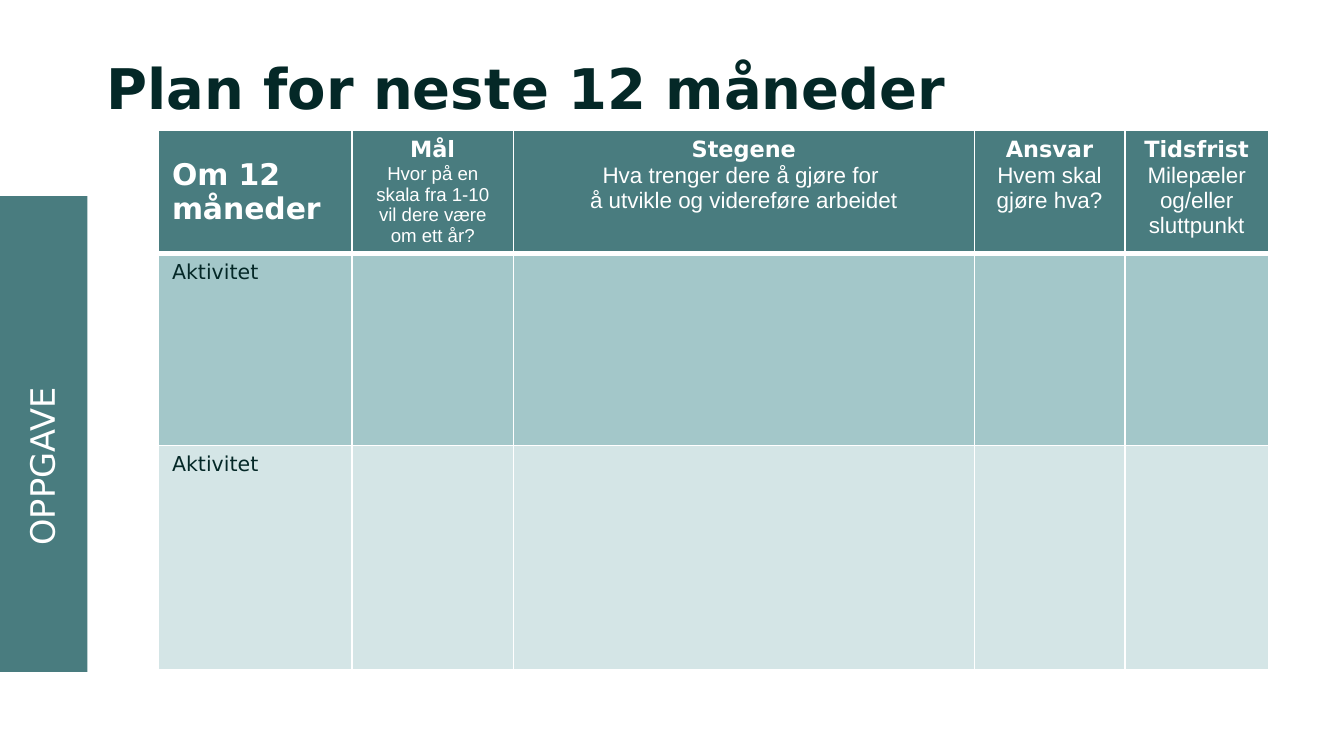
import copy
import dataclasses
import typing

import lxml.etree
import pptx
import pptx.dml.color
import pptx.enum.shapes
import pptx.enum.text
import pptx.oxml.ns
import pptx.util

Inches = pptx.util.Inches
Pt = pptx.util.Pt
qn = pptx.oxml.ns.qn
Align = pptx.enum.text.PP_ALIGN
Anchor = pptx.enum.text.MSO_ANCHOR


@dataclasses.dataclass(frozen=True)
class Theme:
    ink: str = "042827"
    teal: str = "497C7F"
    mid_teal: str = "A3C7C9"
    pale_teal: str = "D4E5E6"
    white: str = "FFFFFF"
    heading_font: str = "DejaVu Sans"
    detail_font: str = "Arial"
    title_size: float = 30
    side_size: float = 18
    period_size: float = 16
    heading_size: float = 12
    activity_size: float = 11
    small_size: float = 10
    rule: float = 1
    header_rule: float = 3


@dataclasses.dataclass(frozen=True)
class Column:
    width: float
    heading: str
    detail: str = ""
    detail_size: float = 12


@dataclasses.dataclass(frozen=True)
class Activity:
    height: float
    label: str
    fill: str


THEME = Theme()
HEADER_HEIGHT = 0.52  # grows to fit its text
PLAN_HEIGHT = 4.07
COLUMNS = [
    Column(1.44, "Om 12 måneder"),
    Column(1.2, "Mål", "Hvor på en skala fra 1-10 vil dere være om ett år?", THEME.small_size),
    Column(3.43, "Stegene", "Hva trenger dere å gjøre for \nå utvikle og videreføre arbeidet"),
    Column(1.12, "Ansvar", "Hvem skal gjøre hva?"),
    Column(1.07, "Tidsfrist", "Milepæler og/eller sluttpunkt"),
]
ACTIVITIES = [
    Activity(1.43, "Aktivitet", THEME.mid_teal),
    Activity(1.67, "Aktivitet", THEME.pale_teal),
]


def rgb(color: str) -> pptx.dml.color.RGBColor:
    return pptx.dml.color.RGBColor.from_string(color)


def format_run(run: typing.Any, size: float, color: str, bold: bool = False,
               font: str = THEME.heading_font) -> None:
    run.font.name = font
    run.font.size = Pt(size)
    run.font.bold = bold
    run.font.color.rgb = rgb(color)


def style_cell(cell: typing.Any, fill: str, top: float, bottom: float) -> None:
    """Give a cell white borders and a solid fill."""
    properties = cell._tc.get_or_add_tcPr()
    widths = {"L": THEME.rule, "R": THEME.rule, "T": top, "B": bottom}
    for side, width in widths.items():
        line = lxml.etree.SubElement(properties, qn(f"a:ln{side}"), w=str(Pt(width)))
        solid = lxml.etree.SubElement(line, qn("a:solidFill"))
        lxml.etree.SubElement(solid, qn("a:srgbClr"), val=THEME.white)
    cell.fill.solid()
    cell.fill.fore_color.rgb = rgb(fill)


def write_header(cell: typing.Any, column: Column) -> None:
    paragraph = cell.text_frame.paragraphs[0]
    paragraph.text = "\n".join(filter(None, (column.heading, column.detail)))
    heading, *details = paragraph.runs
    if not details:
        cell.vertical_anchor = Anchor.MIDDLE
        format_run(heading, THEME.period_size, THEME.white, bold=True)
        return
    paragraph.alignment = Align.CENTER
    format_run(heading, THEME.heading_size, THEME.white, bold=True)
    for detail in details:
        format_run(detail, column.detail_size, THEME.white, font=THEME.detail_font)
    # Line breaks take the format of the run before them
    for line_break in paragraph._p.findall(qn("a:br")):
        line_break.append(copy.deepcopy(line_break.getprevious().find(qn("a:rPr"))))


def add_plan(slide: typing.Any) -> None:
    heights = [HEADER_HEIGHT] + [activity.height for activity in ACTIVITIES]
    frame = slide.shapes.add_table(
        len(heights), len(COLUMNS), Inches(1.18), Inches(0.97),
        Inches(sum(column.width for column in COLUMNS)), Inches(PLAN_HEIGHT))
    plan = frame.table
    for row, height in zip(plan.rows, heights):
        row.height = Inches(height)
    for index, column in enumerate(COLUMNS):
        plan.columns[index].width = Inches(column.width)
        header = plan.cell(0, index)
        style_cell(header, THEME.teal, THEME.rule, THEME.header_rule)
        write_header(header, column)
        for row_index, activity in enumerate(ACTIVITIES, start=1):
            top = THEME.header_rule if row_index == 1 else THEME.rule
            style_cell(plan.cell(row_index, index), activity.fill, top, THEME.rule)
    for row_index, activity in enumerate(ACTIVITIES, start=1):
        paragraph = plan.cell(row_index, 0).text_frame.paragraphs[0]
        paragraph.text = activity.label
        format_run(paragraph.runs[0], THEME.activity_size, THEME.ink)
    frame.height = Inches(PLAN_HEIGHT)


def add_block(shapes: typing.Any, left: float, top: float, width: float, height: float) -> typing.Any:
    block = shapes.add_shape(pptx.enum.shapes.MSO_SHAPE.RECTANGLE, Inches(left), Inches(top),
                             Inches(width), Inches(height))
    block.shadow.inherit = False
    block.fill.solid()
    block.fill.fore_color.rgb = rgb(THEME.teal)
    block.line.fill.background()
    return block


def add_side_tab(slide: typing.Any) -> None:
    tab = slide.shapes.add_group_shape()
    add_block(tab.shapes, 0, 1.46, 0.65, 3.54)
    label = add_block(tab.shapes, -0.76, 3.27, 2.14, 0.4)
    label.rotation = 270
    label.text_frame.text = "OPPGAVE"
    label.text_frame.auto_size = pptx.enum.text.MSO_AUTO_SIZE.SHAPE_TO_FIT_TEXT
    label.text_frame.vertical_anchor = Anchor.TOP
    paragraph = label.text_frame.paragraphs[0]
    paragraph.alignment = Align.CENTER
    format_run(paragraph.runs[0], THEME.side_size, THEME.white)


def add_title(slide: typing.Any) -> None:
    title = slide.shapes.title
    title.left, title.top, title.width, title.height = map(Inches, (0.69, 0.3, 8.62, 0.91))
    frame = title.text_frame
    frame.text = "Plan for neste 12 måneder"
    frame.auto_size = pptx.enum.text.MSO_AUTO_SIZE.NONE
    frame.vertical_anchor = Anchor.TOP
    frame.margin_left = frame.margin_right = frame.margin_top = frame.margin_bottom = Inches(0.1)
    frame.paragraphs[0].alignment = Align.LEFT
    format_run(frame.paragraphs[0].runs[0], THEME.title_size, THEME.ink, bold=True)


def main() -> None:
    presentation = pptx.Presentation()
    presentation.slide_width = Inches(10)
    presentation.slide_height = presentation.slide_width * 9 // 16
    slide = presentation.slides.add_slide(presentation.slide_layouts[5])
    add_title(slide)
    add_plan(slide)
    add_side_tab(slide)
    presentation.save("out.pptx")


if __name__ == "__main__":
    main()
